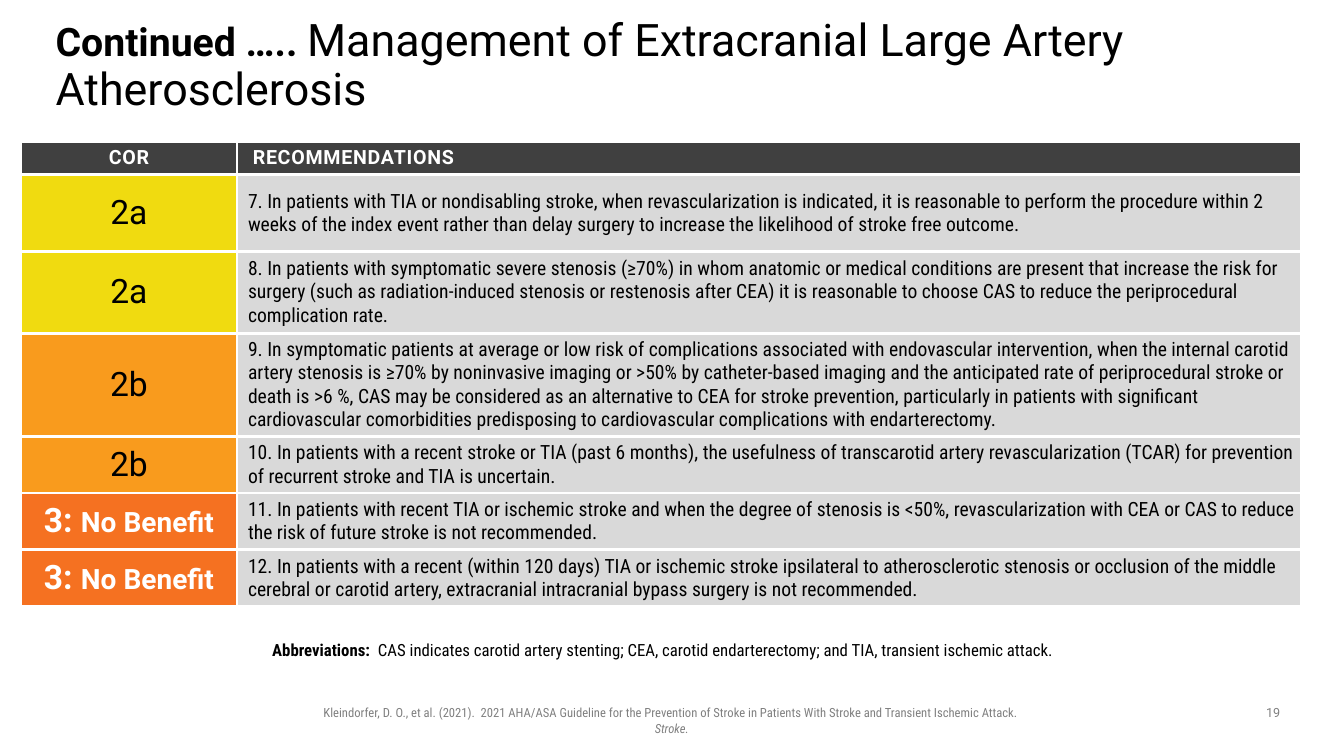
from pptx import Presentation
from pptx import util as u
from pptx.dml import color
from pptx.enum import text
from pptx.oxml import parse_xml
from pptx.oxml import ns

MID = text.MSO_ANCHOR.MIDDLE
LEFT = text.PP_ALIGN.LEFT
CENTER = text.PP_ALIGN.CENTER


def tint(code):
    return color.RGBColor.from_string(code)


class Deck:
    wide = "Roboto"
    slim = "Roboto Condensed"
    black, white, gray = "000000", "FFFFFF", "808080"
    dark, pale = "404040", "D9D9D9"
    rule = 2.25

    def __init__(self):
        self.file = Presentation()
        self.file.slide_width = u.Cm(33.87)
        self.file.slide_height = u.Cm(19.05)
        self.slide = self.file.slides.add_slide(self.file.slide_layouts[1])

    def fill_in(self, frame, runs, align=LEFT, lines=1.0, indent=0, hang=0):
        para = frame.paragraphs[0]
        props = para._p.get_or_add_pPr()
        props.set("marL", str(u.Cm(indent)))
        props.set("indent", str(u.Cm(-hang)))
        props.append(parse_xml(f"<a:buNone {ns.nsdecls('a')}/>"))
        para.alignment = align
        para.line_spacing = lines
        para.space_before = u.Pt(0)
        for words, size, face, shade, *marks in runs:
            run = para.add_run()
            run.text = words
            run.font.size = u.Pt(size)
            run.font.name = face
            run.font.color.rgb = tint(shade)
            run.font.bold = "bold" in marks
            run.font.italic = "italic" in marks
            if "spaced" in marks:
                run._r.get_or_add_rPr().set("spc", "50")

    def pad(self, frame, left, top, right, low):
        frame.margin_left, frame.margin_top = u.Cm(left), u.Cm(top)
        frame.margin_right, frame.margin_bottom = u.Cm(right), u.Cm(low)

    def place(self, item, box):
        item.left, item.top, item.width, item.height = map(u.Cm, box)
        item.text_frame.word_wrap = True
        item.text_frame.auto_size = text.MSO_AUTO_SIZE.NONE
        return item.text_frame

    def title(self, box, runs):
        frame = self.place(self.slide.shapes.title, box)
        self.pad(frame, 0, 0, 0, 0)
        frame.vertical_anchor = MID
        self.fill_in(frame, runs, lines=0.9)

    def body(self, box, runs):
        frame = self.place(self.slide.placeholders[1], box)
        self.pad(frame, 0, 0.13, 0.25, 0.13)
        frame.vertical_anchor = text.MSO_ANCHOR.TOP
        self.fill_in(frame, runs, lines=0.9, indent=0.64, hang=0.64)

    def label(self, box, runs):
        item = self.slide.shapes.add_textbox(*map(u.Cm, box))
        self.fill_in(self.place(item, box), runs, CENTER)

    def cell(self, cell, fill, runs, align, indent, side):
        props = cell._tc.get_or_add_tcPr()
        for edge in "LRTB":
            props.append(parse_xml(
                f'<a:ln{edge} {ns.nsdecls("a")} w="{u.Pt(self.rule)}"><a:solidFill>'
                f'<a:srgbClr val="{self.white}"/></a:solidFill></a:ln{edge}>'))
        cell.fill.solid()
        cell.fill.fore_color.rgb = tint(fill)
        cell.vertical_anchor = MID
        self.pad(cell, side, 0.13, side, 0.13)
        self.fill_in(cell.text_frame, runs, align, indent=indent)

    def table(self, left, top, widths, heights, rows):
        grid = self.slide.shapes.add_table(
            len(rows), len(widths), u.Cm(left), u.Cm(top),
            u.Cm(sum(widths)), u.Cm(sum(heights))).table
        grid.first_row = grid.horz_banding = False
        for col, width in zip(grid.columns, widths):
            col.width = u.Cm(width)
        for row, height in zip(grid.rows, heights):
            row.height = u.Cm(height)
        for y, (fills, grade, advice) in enumerate(rows):
            side = 0.13 if y else 0.25
            self.cell(grid.cell(y, 0), fills[0], grade, CENTER, 0, side)
            self.cell(grid.cell(y, 1), fills[1], advice, LEFT, 0.15, side)


GRADES = {
    "2a": ("F0DB10", [("2a", 24, Deck.wide, Deck.black)]),
    "2b": ("F99B1D", [("2b", 24, Deck.wide, Deck.black)]),
    "3": ("F57121", [("3: ", 24, Deck.wide, Deck.white, "bold"),
                     ("No Benefit", 20, Deck.wide, Deck.white, "bold")]),
}

ADVICE = [
    ("2a", 1.93, "7. In patients with TIA or nondisabling stroke, when revascularization is indicated, it is reasonable to perform the procedure within 2 weeks of the index event rather than delay surgery to increase the likelihood of stroke free outcome."),
    ("2a", 2.06, "8. In patients with symptomatic severe stenosis (≥70%) in whom anatomic or medical conditions are present that increase the risk for surgery (such as radiation-induced stenosis or restenosis after CEA) it is reasonable to choose CAS to reduce the periprocedural complication rate."),
    ("2b", 2.6, "9. In symptomatic patients at average or low risk of complications associated with endovascular intervention, when the internal carotid artery stenosis is ≥70% by noninvasive imaging or >50% by catheter-based imaging and the anticipated rate of periprocedural stroke or death is >6 %, CAS may be considered as an alternative to CEA for stroke prevention, particularly in patients with significant cardiovascular comorbidities predisposing to cardiovascular complications with endarterectomy."),
    ("2b", 1.42, "10. In patients with a recent stroke or TIA (past 6 months), the usefulness of transcarotid artery revascularization (TCAR) for prevention of recurrent stroke and TIA is uncertain."),
    ("3", 1.42, "11. In patients with recent TIA or ischemic stroke and when the degree of stenosis is <50%, revascularization with CEA or CAS to reduce the risk of future stroke is not recommended."),
    ("3", 1.42, "12. In patients with a recent (within 120 days) TIA or ischemic stroke ipsilateral to atherosclerotic stenosis or occlusion of the middle cerebral or carotid artery, extracranial intracranial bypass surgery is not recommended."),
]


def main():
    deck = Deck()
    deck.title((1.4, 0.76, 29.21, 1.83), [
        ("Continued ….. ", 28, deck.wide, deck.black, "bold"),
        ("Management of Extracranial Large Artery Atherosclerosis", 32, deck.wide, deck.black)])

    heads = [[(name, 14, deck.wide, deck.white, "bold", "spaced")]
             for name in ("COR", "RECOMMENDATIONS")]
    rows = [((deck.dark, deck.dark), *heads)]
    for grade, _, words in ADVICE:
        fill, mark = GRADES[grade]
        rows.append(((fill, deck.pale), mark, [(words, 14, deck.slim, deck.black)]))
    heights = [0.84] + [height for _, height, _ in ADVICE]
    deck.table(0.53, 3.56, [5.44, 26.82], heights, rows)

    deck.body((6.86, 16.05, 21.11, 0.76), [
        ("Abbreviations:  ", 12, deck.slim, deck.black, "bold"),
        ("CAS indicates carotid artery stenting; CEA, carotid endarterectomy; and TIA, transient ischemic attack.", 12, deck.slim, deck.black)])
    deck.label((7.47, 17.65, 18.92, 0.64), [
        ("Kleindorfer, D. O., et al. (2021).  2021 AHA/ASA Guideline for the Prevention of Stroke in Patients With Stroke and Transient Ischemic Attack.  ", 9, deck.slim, deck.gray),
        ("Stroke.", 9, deck.slim, deck.gray, "italic")])
    deck.label((31.55, 17.65, 1.07, 0.66), [("19", 9, deck.wide, deck.gray)])
    deck.file.save("out.pptx")


if __name__ == "__main__":
    main()
